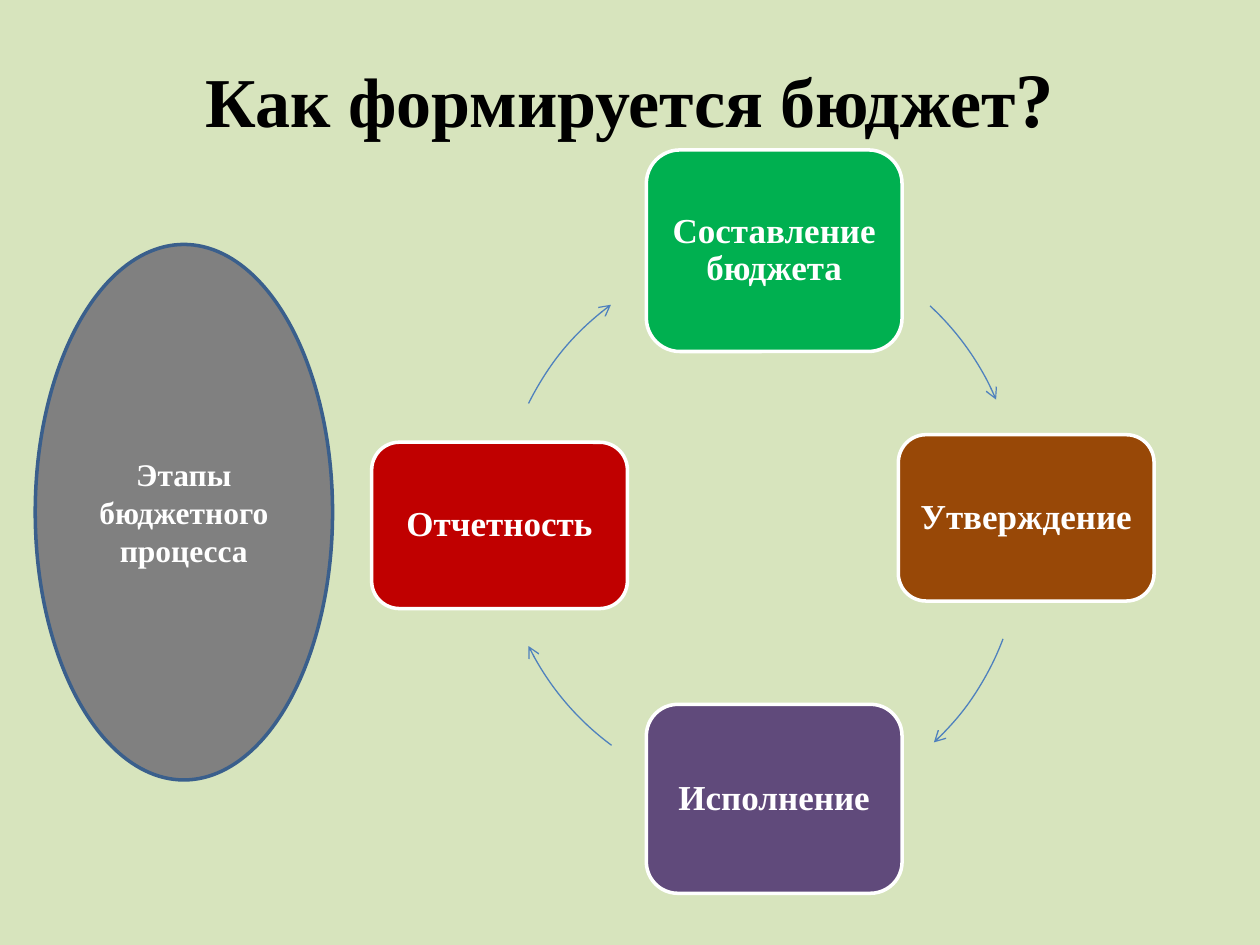
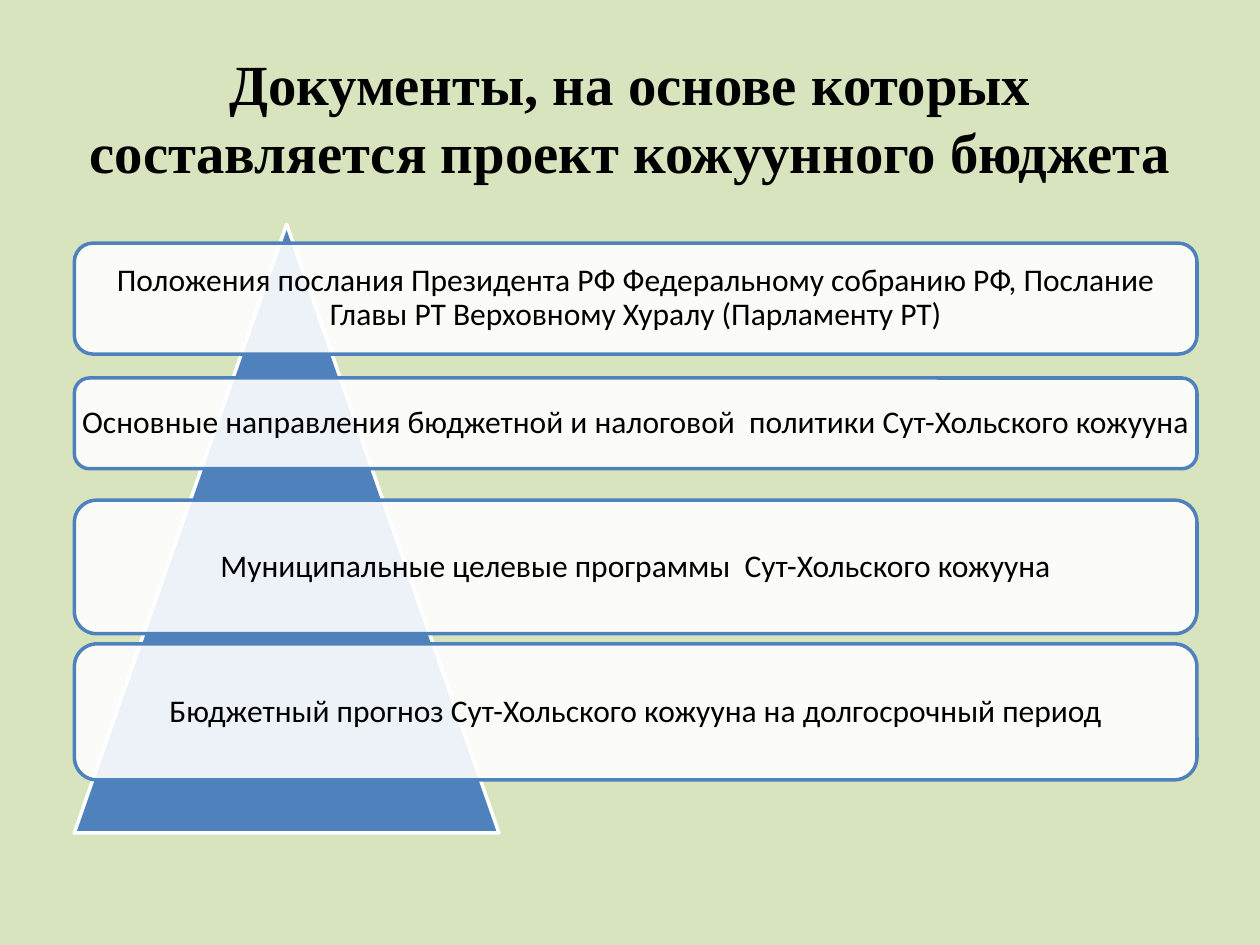
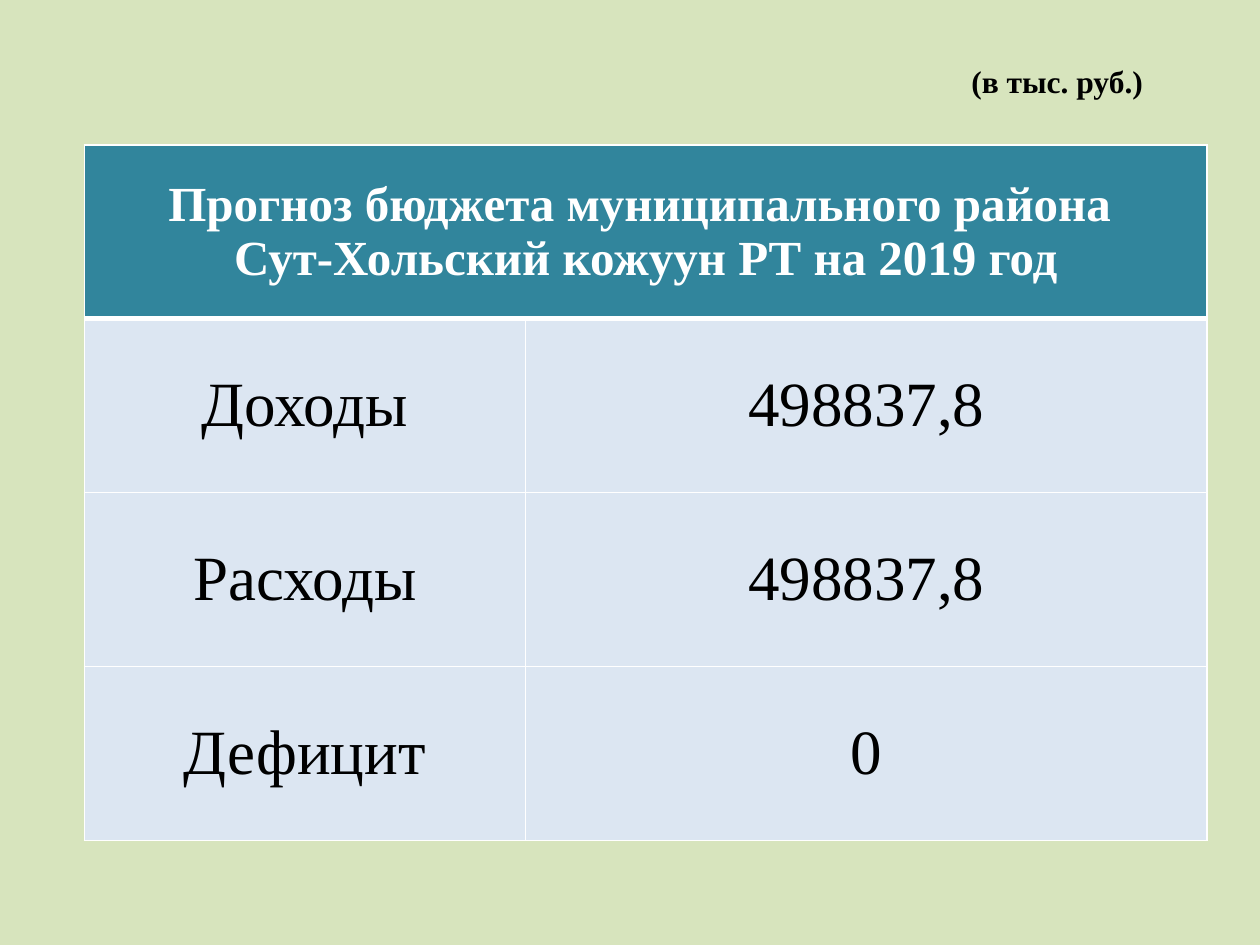
from math import atan2, degrees

from lxml.etree import SubElement
from pptx import Presentation
from pptx.dml.color import RGBColor
from pptx.enum.shapes import MSO_SHAPE
from pptx.enum.text import MSO_ANCHOR, PP_ALIGN
from pptx.oxml.ns import qn
from pptx.util import Inches, Pt

COLORS = {
    "background": "D7E4BD", "black": "000000", "white": "FFFFFF",
    "blue": "4F81BD", "dark_blue": "3A5F8C", "gray": "808080",
    "green": "00B050", "brown": "984807", "purple": "604A7B", "red": "C00000",
    "teal": "31859C", "pale_blue": "DCE6F2",
}
SERIF = "Times New Roman"
SANS = "Calibri"

CYCLE_TITLE = "Как формируется бюджет"
STAGES = [
    ("Составление бюджета", "green", (5.13, 1.19), 1.6),
    ("Утверждение", "brown", (7.13, 3.45), 1.32),
    ("Исполнение", "purple", (5.13, 5.59), 1.5),
    ("Отчетность", "red", (2.95, 3.51), 1.32),
]
STAGE_WIDTH = 2.03
ARC_DIAMETER = 4.35
CYCLE_ARCS = [
    ((3.73, 1.85), (7.38, 2.43), (7.91, 3.17)),
    ((3.75, 2.13), (7.96, 5.07), (7.41, 5.89)),
    ((3.97, 1.99), (4.85, 5.92), (4.19, 5.13)),
    ((3.97, 1.99), (4.19, 3.2), (4.85, 2.42)),
]
PROCESS_LABEL = "Этапы бюджетного процесса"

DOCUMENTS_TITLE = "Документы, на основе которых составляется проект кожуунного бюджета"
DOCUMENTS = [
    ("Положения послания Президента РФ Федеральному собранию РФ, "
     "Послание Главы РТ Верховному Хуралу (Парламенту РТ)", 1.93, 0.88),
    ("Основные направления бюджетной и налоговой  политики Сут-Хольского кожууна", 3, 0.72),
    ("Муниципальные целевые программы  Сут-Хольского кожууна", 3.97, 1.06),
    ("Бюджетный прогноз Сут-Хольского кожууна на долгосрочный период", 5.11, 1.08),
]

UNITS = "(в тыс. руб.)"
TABLE_HEADER = "Прогноз бюджета муниципального района \nСут-Хольский кожуун РТ на 2019 год"
BUDGET_ROWS = [("Доходы", "498837,8"), ("Расходы", "498837,8"), ("Дефицит", "0")]
COLUMN_WIDTHS = [3.5, 5.41]
ROW_HEIGHT = 1.38


def rgb(name):
    return RGBColor.from_string(COLORS[name])


def write(text_frame, text, size, color="black", font=SERIF, bold=True, spacing=None):
    text_frame.text = text
    for paragraph in text_frame.paragraphs:
        paragraph.alignment = PP_ALIGN.CENTER
        paragraph.line_spacing = spacing
        for run in paragraph.runs:
            run.font.name = font
            run.font.size = Pt(size)
            run.font.bold = bold
            run.font.color.rgb = rgb(color)


def add_slide(presentation):
    slide = presentation.slides.add_slide(presentation.slide_layouts[6])
    slide.background.fill.solid()
    slide.background.fill.fore_color.rgb = rgb("background")
    return slide


def add_text(slide, box, text, size, wrap=True):
    text_frame = slide.shapes.add_textbox(*map(Inches, box)).text_frame
    text_frame.word_wrap = wrap
    write(text_frame, text, size)
    return text_frame


def add_title(slide, text, size, height):
    text_frame = add_text(slide, (0.5, 0.3, 9, height), text, size)
    text_frame.vertical_anchor = MSO_ANCHOR.MIDDLE
    return text_frame


def add_figure(slide, kind, box, fill, line, width=2):
    shape = slide.shapes.add_shape(kind, *map(Inches, box))
    shape.shadow.inherit = False
    if fill:
        shape.fill.solid()
        shape.fill.fore_color.rgb = rgb(fill)
    else:
        shape.fill.background()
    shape.line.color.rgb = rgb(line)
    shape.line.width = Pt(width)
    shape.text_frame.word_wrap = True
    shape.text_frame.vertical_anchor = MSO_ANCHOR.MIDDLE
    return shape


def set_margins(text_frame, margin):
    text_frame.margin_left = text_frame.margin_right = Inches(margin)
    text_frame.margin_top = text_frame.margin_bottom = Inches(margin)


def add_arc_arrow(slide, corner, start, end):
    shape = add_figure(slide, MSO_SHAPE.ARC, (*corner, ARC_DIAMETER, ARC_DIAMETER),
                       None, "blue", 0.75)
    center_x, center_y = (value + ARC_DIAMETER / 2 for value in corner)
    for index, (x, y) in enumerate((start, end)):
        angle = degrees(atan2(y - center_y, x - center_x)) % 360
        shape.adjustments[index] = angle * 60000 / 100000
    SubElement(shape.line._get_or_add_ln(), qn("a:tailEnd"), type="arrow")


def set_border(cell, side, points):
    line = SubElement(cell._tc.get_or_add_tcPr(), qn(f"a:ln{side}"), w=str(Pt(points)))
    fill = SubElement(line, qn("a:solidFill"))
    SubElement(fill, qn("a:srgbClr"), val=COLORS["white"])


def format_cell(cell, fill, top=1, bottom=1):
    for side, points in (("L", 1), ("R", 1), ("T", top), ("B", bottom)):
        set_border(cell, side, points)
    cell.fill.solid()
    cell.fill.fore_color.rgb = rgb(fill)
    cell.vertical_anchor = MSO_ANCHOR.MIDDLE


def build_cycle(presentation):
    slide = add_slide(presentation)
    title = add_title(slide, CYCLE_TITLE, 40, 0.93)
    mark = title.paragraphs[0].add_run()
    mark.text = "?"
    mark.font.name = SERIF
    mark.font.size = Pt(44)
    mark.font.bold = True
    mark.font.color.rgb = rgb("black")
    for (text, color, corner, height), arc in zip(STAGES, CYCLE_ARCS):
        stage = add_figure(slide, MSO_SHAPE.ROUNDED_RECTANGLE,
                           (*corner, STAGE_WIDTH, height), color, "white")
        set_margins(stage.text_frame, 0)
        write(stage.text_frame, text, 20, "white", spacing=0.9)
        add_arc_arrow(slide, *arc)
    process = add_figure(slide, MSO_SHAPE.OVAL, (0.28, 1.94, 2.36, 4.25), "gray", "dark_blue")
    write(process.text_frame, PROCESS_LABEL, 18, "white")


def build_documents(presentation):
    slide = add_slide(presentation)
    add_title(slide, DOCUMENTS_TITLE, 32.4, 1.25)
    add_figure(slide, MSO_SHAPE.ISOSCELES_TRIANGLE, (0.59, 1.78, 3.37, 4.83), "blue", "white")
    for text, top, height in DOCUMENTS:
        document = add_figure(slide, MSO_SHAPE.ROUNDED_RECTANGLE,
                              (0.59, top, 8.91, height), "white", "blue")
        fill_color = document.fill._xPr.find(qn("a:solidFill"))[0]
        SubElement(fill_color, qn("a:alpha"), val="90000")
        set_margins(document.text_frame, 0.02)
        write(document.text_frame, text, 18, font=SANS, bold=False, spacing=0.9)


def build_forecast(presentation):
    slide = add_slide(presentation)
    row_count = len(BUDGET_ROWS) + 1
    box = (0.67, 1.15, sum(COLUMN_WIDTHS), ROW_HEIGHT * row_count)
    table = slide.shapes.add_table(row_count, len(COLUMN_WIDTHS), *map(Inches, box)).table
    for column, width in zip(table.columns, COLUMN_WIDTHS):
        column.width = Inches(width)
    for row in table.rows:
        row.height = Inches(ROW_HEIGHT)
    header = table.cell(0, 0)
    header.merge(table.cell(0, 1))
    for cell in table.rows[0].cells:
        format_cell(cell, "teal", bottom=3)
    write(header.text_frame, TABLE_HEADER, 28, "white")
    for row_index, values in enumerate(BUDGET_ROWS, 1):
        for column_index, value in enumerate(values):
            cell = table.cell(row_index, column_index)
            format_cell(cell, "pale_blue", top=3 if row_index == 1 else 1)
            write(cell.text_frame, value, 36, bold=False)
    add_text(slide, (7.6, 0.44, 1.58, 0.4), UNITS, 18, wrap=False)


def main():
    presentation = Presentation()
    presentation.slide_width = Inches(10)
    presentation.slide_height = Inches(7.5)
    build_cycle(presentation)
    build_documents(presentation)
    build_forecast(presentation)
    presentation.save("out.pptx")


if __name__ == "__main__":
    main()
